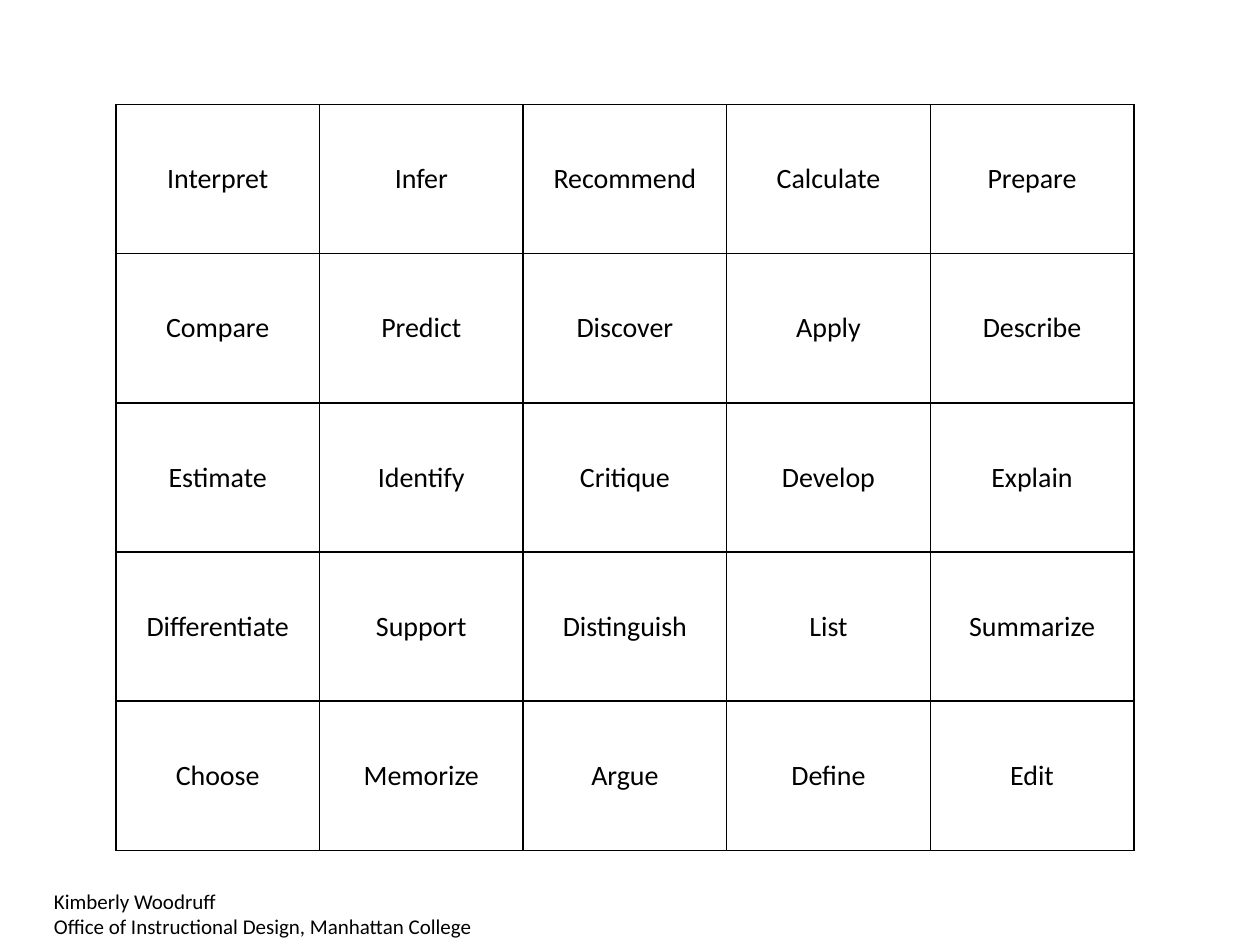
from lxml import etree
from pptx import Presentation
from pptx.dml.color import RGBColor
from pptx.enum.text import MSO_ANCHOR, PP_ALIGN
from pptx.oxml.ns import qn
from pptx.util import Inches, Pt

BLACK = RGBColor(0x00, 0x00, 0x00)
MIDDLE = MSO_ANCHOR.MIDDLE
CENTER = PP_ALIGN.CENTER
FONT_NAME = "Calibri"

VERBS = [
    ["Interpret", "Infer", "Recommend", "Calculate", "Prepare"],
    ["Compare", "Predict", "Discover", "Apply", "Describe"],
    ["Estimate", "Identify", "Critique", "Develop", "Explain"],
    ["Differentiate", "Support", "Distinguish", "List", "Summarize"],
    ["Choose", "Memorize", "Argue", "Define", "Edit"],
]
CREDIT_LINES = ["Kimberly Woodruff", "Office of Instructional Design, Manhattan College"]


def style_font(para, size):
    para.font.name = FONT_NAME
    para.font.size = Pt(size)
    para.font.color.rgb = BLACK


def add_borders(cell):
    properties = cell._tc.get_or_add_tcPr()
    for index, side in enumerate(("a:lnL", "a:lnR", "a:lnT", "a:lnB")):
        line = etree.Element(qn(side), w=str(Pt(1)))
        fill = etree.SubElement(line, qn("a:solidFill"))
        etree.SubElement(fill, qn("a:srgbClr"), val=str(BLACK))
        properties.insert(index, line)


deck = Presentation()
deck.slide_width = Inches(10)
deck.slide_height = Inches(7.5)
page = deck.slides.add_slide(deck.slide_layouts[6])

# Bingo grid of verbs, with equal columns and rows
table = page.shapes.add_table(
    len(VERBS), len(VERBS[0]), Inches(0.92), Inches(0.83), Inches(8.08), Inches(5.92)
).table
table.first_row = False
table.horz_banding = False
for row, verbs in enumerate(VERBS):
    for column, verb in enumerate(verbs):
        cell = table.cell(row, column)
        cell.text = verb
        cell.vertical_anchor = MIDDLE
        cell.fill.background()
        add_borders(cell)
        para = cell.text_frame.paragraphs[0]
        para.alignment = CENTER
        style_font(para, 16)

# Author credit
box = page.shapes.add_textbox(Inches(0.33), Inches(7), Inches(9.08), Inches(0.5))
frame = box.text_frame
frame.word_wrap = True
frame.text = "\n".join(CREDIT_LINES)
for para in frame.paragraphs:
    style_font(para, 12)

deck.save("out.pptx")
